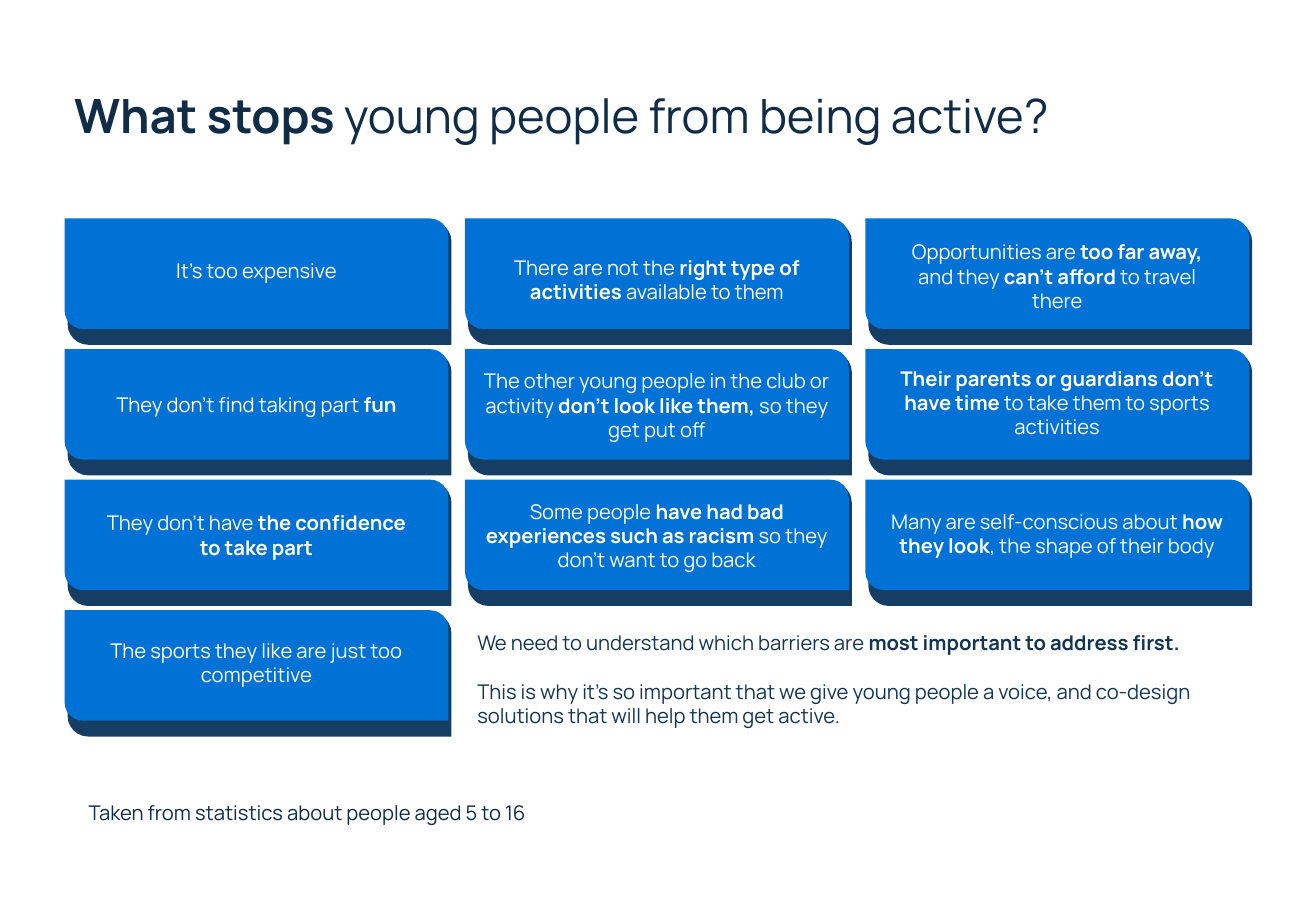
"""Builds the slide on the barriers that stop young people from being active."""
from dataclasses import dataclass

from pptx import Presentation
from pptx.dml.color import RGBColor
from pptx.enum.shapes import MSO_SHAPE
from pptx.enum.text import MSO_ANCHOR, MSO_AUTO_SIZE, PP_ALIGN
from pptx.util import Pt

CARD_SHAPE = MSO_SHAPE.ROUND_2_DIAG_RECTANGLE
TOP, MIDDLE = MSO_ANCHOR.TOP, MSO_ANCHOR.MIDDLE
LEFT, CENTER = PP_ALIGN.LEFT, PP_ALIGN.CENTER
NO_AUTOFIT = MSO_AUTO_SIZE.NONE
TITLE_ONLY = 5


@dataclass(frozen=True)
class Theme:
    """Colours, font and type sizes of the slide."""
    font: str = "Manrope"
    title_size: int = 28
    body_size: int = 12
    heading: RGBColor = RGBColor(0x10, 0x2C, 0x47)
    body: RGBColor = RGBColor(0x13, 0x35, 0x54)
    card: RGBColor = RGBColor(0x00, 0x72, 0xD6)
    card_base: RGBColor = RGBColor(0x16, 0x3E, 0x64)
    card_text: RGBColor = RGBColor(0xFF, 0xFF, 0xFF)


THEME = Theme()

GRID_LEFT, GRID_TOP = 38.3, 129.5
COLUMN_STEP, ROW_STEP = 237.3, 77.4
CARD_WIDTH, CARD_HEIGHT, BASE_HEIGHT = 227.5, 65.5, 73.4
BASE_SHIFT_X, BASE_SHIFT_Y = 1.8, 1.5
COLUMNS = 3

# Each barrier: text with **bold** parts, width of its text, downward shift.
BARRIERS = [
    ("It's too expensive", 166, -1.8),
    ("There are not the **right type of activities** available to them", 201, 3.2),
    ("Opportunities are **too far away, **and they **can't afford** to travel there", 177, 1.4),
    ("They don't find taking part **fun**", 204, 0),
    ("The other young people in the club or activity **don't look like them,** "
     "so they get put off", 219, 0.4),
    ("**Their parents or guardians don't have time** to take them to sports activities", 194, -1),
    ("They don't have **the confidence to take part**", 191, 0),
    ("Some people **have had bad experiences such as racism** "
     "so they don't want to go back", 210, 0.4),
    ("Many are self-conscious about **how they look**, the shape of their body", 201, -1),
    ("The sports they like are just too competitive", 187, -1.8),
]

CONCLUSIONS = [
    "We need to understand which barriers are **most important to address first.**",
    "This is why it's so important that we give young people a voice, "
    "and co-design solutions that will help them get active.",
]


def write_paragraph(paragraph, text, size, color, alignment=LEFT):
    """Write text into a paragraph, with the parts between ** in bold."""
    paragraph.alignment = alignment
    paragraph.font.name = THEME.font
    paragraph.font.size = Pt(size)
    paragraph.font.color.rgb = color
    for index, part in enumerate(text.split("**")):
        if part:
            run = paragraph.add_run()
            run.text = part
            run.font.bold = index % 2 == 1


def set_title(slide, text):
    """Place and fill the title placeholder."""
    title = slide.shapes.title
    title.left, title.top, title.width, title.height = Pt(38.2), Pt(48.2), Pt(695), Pt(39.6)
    frame = title.text_frame
    frame.auto_size = NO_AUTOFIT
    frame.word_wrap = True
    frame.vertical_anchor = TOP
    frame.margin_left = frame.margin_right = Pt(5.76)
    frame.margin_top = frame.margin_bottom = Pt(2.88)
    write_paragraph(frame.paragraphs[0], text, THEME.title_size, THEME.heading)


def add_text(slide, left, top, width, height, texts, color):
    """Add a wrapping text box with one paragraph per text."""
    frame = slide.shapes.add_textbox(Pt(left), Pt(top), Pt(width), Pt(height)).text_frame
    frame.word_wrap = True
    for index, text in enumerate(texts):
        paragraph = frame.add_paragraph() if index else frame.paragraphs[0]
        paragraph.space_before = Pt(14.4 if index else 0)
        write_paragraph(paragraph, text, THEME.body_size, color)


def add_panel(group, left, top, height, color):
    """Add a panel rounded at its top right and bottom left corners."""
    panel = group.shapes.add_shape(CARD_SHAPE, Pt(left), Pt(top), Pt(CARD_WIDTH), Pt(height))
    panel.adjustments[0], panel.adjustments[1] = 0, 0.1667
    panel.fill.solid()
    panel.fill.fore_color.rgb = color
    panel.line.fill.background()
    panel.shadow.inherit = False
    return panel


def add_card(slide, left, top, text, text_width, shift):
    """Add a barrier card: a dark base behind a blue panel with text."""
    group = slide.shapes.add_group_shape()
    add_panel(group, left + BASE_SHIFT_X, top + BASE_SHIFT_Y, BASE_HEIGHT, THEME.card_base)
    frame = add_panel(group, left, top, CARD_HEIGHT, THEME.card).text_frame
    frame.word_wrap = True
    frame.vertical_anchor = MIDDLE
    frame.margin_left = frame.margin_right = Pt((CARD_WIDTH - text_width) / 2 - 3.2)
    frame.margin_top = Pt(max(2 * shift, 0))
    frame.margin_bottom = Pt(max(-2 * shift, 0))
    write_paragraph(frame.paragraphs[0], text, THEME.body_size, THEME.card_text, CENTER)


def main():
    """Build and save the presentation."""
    presentation = Presentation()
    presentation.slide_width, presentation.slide_height = Pt(780), Pt(540)
    slide = presentation.slides.add_slide(presentation.slide_layouts[TITLE_ONLY])
    set_title(slide, "**What stops** young people from being active?")
    for index, (text, text_width, shift) in enumerate(BARRIERS):
        row, column = divmod(index, COLUMNS)
        add_card(slide, GRID_LEFT + column * COLUMN_STEP, GRID_TOP + row * ROW_STEP,
                 text, text_width, shift)
    add_text(slide, 275.8, 370, 480, 65.5, CONCLUSIONS, THEME.body)
    add_text(slide, 45.4, 470.9, 468, 21.6,
             ["Taken from statistics about people aged 5 to 16"], THEME.heading)
    presentation.save("out.pptx")


if __name__ == "__main__":
    main()
